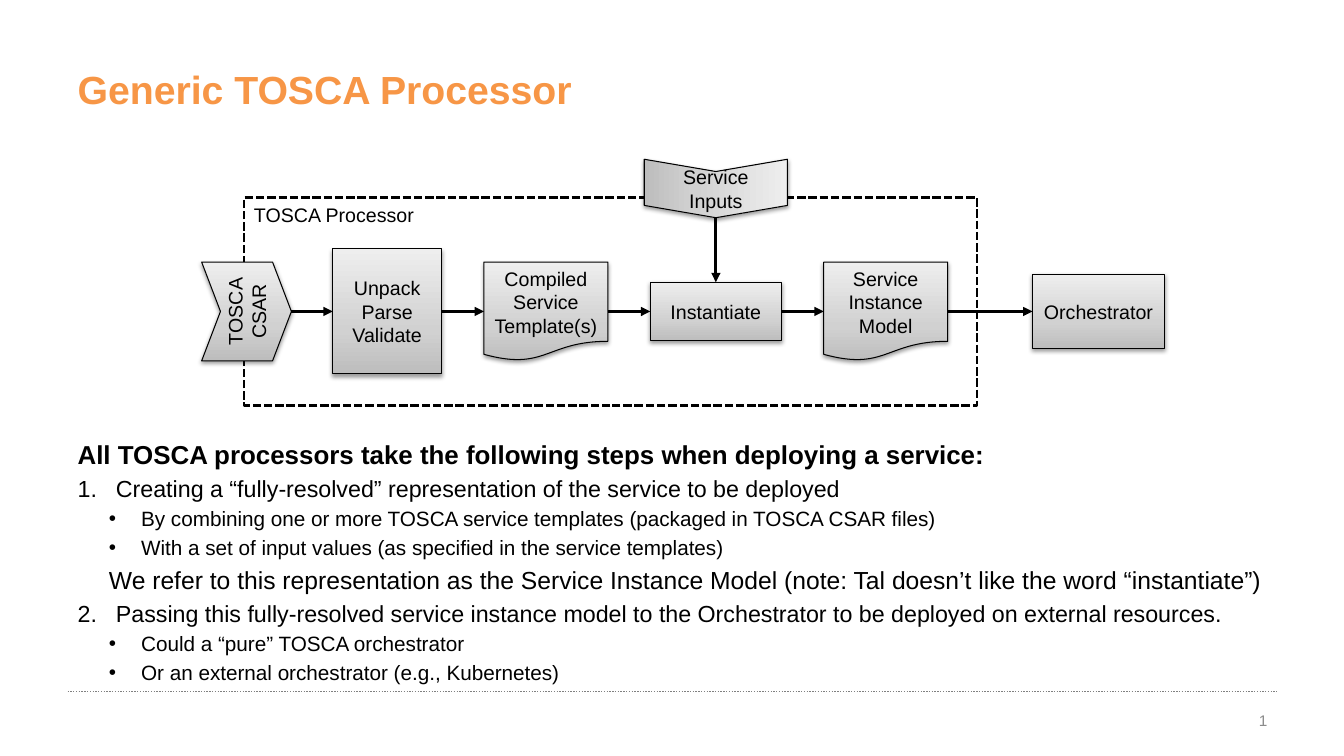
from copy import deepcopy
from dataclasses import dataclass

from lxml import etree
from pptx import Presentation
from pptx import util as u
from pptx.dml.color import RGBColor
from pptx.enum import dml, shapes, text
from pptx.oxml.ns import qn

PX = 9144  # one hundredth of an inch in EMU
FONT = "Arial"
BLACK = RGBColor(0x00, 0x00, 0x00)
ORANGE = RGBColor(0xF7, 0x96, 0x46)
RULE_GREY = RGBColor(0x80, 0x80, 0x80)
NUMBER_GREY = RGBColor(0x8C, 0x8C, 0x8C)
GRADIENT = [
    (0, RGBColor(0xBD, 0xBD, 0xBD)),
    (0.35, RGBColor(0xD1, 0xD1, 0xD1)),
    (1, RGBColor(0xEE, 0xEE, 0xEE)),
]
ROW_MIDDLE = 309
SHAPE = shapes.MSO_SHAPE
LEFT, CENTER, RIGHT = text.PP_ALIGN.LEFT, text.PP_ALIGN.CENTER, text.PP_ALIGN.RIGHT
TOP, MIDDLE = text.MSO_ANCHOR.TOP, text.MSO_ANCHOR.MIDDLE


@dataclass
class Step:
    lines: list[str]
    left: int
    width: int
    height: int
    kind: int = SHAPE.RECTANGLE
    middle: int = ROW_MIDDLE
    rotation: int = 0


@dataclass
class Item:
    words: str
    size: float
    level: int = 0
    margin: int = 0
    indent: int = 0
    bullet: str = "buNone"
    bold: bool = False


STEPS = [
    Step(["TOSCA", "CSAR"], 200, 89, 98, SHAPE.CHEVRON),
    Step(["Unpack Parse Validate"], 330, 108, 124),
    Step(["Compiled", "Service Template(s)"], 480, 123, 98, SHAPE.FLOWCHART_DOCUMENT),
    Step(["Instantiate"], 645, 130, 58),
    Step(["Service", "Instance Model"], 817, 123, 98, SHAPE.FLOWCHART_DOCUMENT),
    Step(["Orchestrator"], 1024, 131, 74),
]
INPUTS = Step(["Service Inputs"], 681, 58, 142, SHAPE.CHEVRON, middle=187, rotation=90)

NUMBERED = dict(size=16.6, level=1, margin=38, indent=-38, bullet="buAutoNum")
BULLETED = dict(size=14.8, level=2, margin=63, indent=-32, bullet="buChar")
ITEMS = [
    Item("All TOSCA processors take the following steps when deploying a service:",
         18.5, bold=True),
    Item("Creating a “fully-resolved” representation of the service to be deployed",
         **NUMBERED),
    Item("By combining one or more TOSCA service templates (packaged in TOSCA CSAR files)",
         **BULLETED),
    Item("With a set of input values (as specified in the service templates)", **BULLETED),
    Item("We refer to this representation as the Service Instance Model "
         "(note: Tal doesn’t like the word “instantiate”)", 17.6, level=2, margin=31),
    Item("Passing this fully-resolved service instance model to the Orchestrator "
         "to be deployed on external resources.", **NUMBERED),
    Item("Could a “pure” TOSCA orchestrator", **BULLETED),
    Item("Or an external orchestrator (e.g., Kubernetes)", **BULLETED),
]
BULLET_ATTRIBUTES = {
    "buNone": {},
    "buAutoNum": {"type": "arabicPeriod"},
    "buChar": {"char": "•"},
}


def box(left: int, top: int, width: int, height: int) -> list[int]:
    return [value * PX for value in (left, top, width, height)]


def place(shape, left: int, top: int, width: int, height: int) -> None:
    shape.left, shape.top, shape.width, shape.height = box(left, top, width, height)


def add_run(paragraph, words: str, *, size: float, color=BLACK, bold=False) -> None:
    run = paragraph.add_run()
    run.text = words
    run.font.name = FONT
    run.font.size = u.Pt(size)
    run.font.bold = bold
    run.font.color.rgb = color


def write(shape, lines: list[str], *, align=CENTER, anchor=MIDDLE, **font) -> None:
    frame = shape.text_frame
    frame.word_wrap = True
    frame.auto_size = text.MSO_AUTO_SIZE.NONE
    frame.vertical_anchor = anchor
    for index, line in enumerate(lines):
        paragraph = frame.add_paragraph() if index else frame.paragraphs[0]
        paragraph.alignment = align
        add_run(paragraph, line, **font)


def shade(shape) -> None:
    """Give the shape the grey gradient and the soft shadow below it."""
    shape.fill.gradient()
    shape.fill.gradient_angle = 90
    properties = shape._element.spPr
    stops = properties.find(".//" + qn("a:gsLst"))
    stops.insert(1, deepcopy(stops[0]))
    for stop, (position, color) in zip(shape.fill.gradient_stops, GRADIENT):
        stop.position = position
        stop.color.rgb = color
    shadow = etree.SubElement(
        properties.find(qn("a:effectLst")), qn("a:outerShdw"),
        blurRad="40000", dist="20000", dir="5400000", rotWithShape="0")
    color = etree.SubElement(shadow, qn("a:srgbClr"), val=str(BLACK))
    etree.SubElement(color, qn("a:alpha"), val="38000")


def add_step(slide, step: Step):
    top = step.middle - step.height // 2
    shape = slide.shapes.add_shape(step.kind, *box(step.left, top, step.width, step.height))
    shape.rotation = step.rotation
    shape.shadow.inherit = False
    shape.line.color.rgb = BLACK
    shape.line.width = u.Pt(0.75)
    shade(shape)
    write(shape, step.lines, size=14)
    if step.kind == SHAPE.CHEVRON:
        shape.adjustments[0] = 0.21
        shape.text_frame._txBody.bodyPr.set("vert", "vert270")
    return shape


def add_line(slide, start: tuple[int, int], end: tuple[int, int], *, color=BLACK, width=2.25):
    points = [value * PX for value in (*start, *end)]
    line = slide.shapes.add_connector(shapes.MSO_CONNECTOR.STRAIGHT, *points)
    line.line.color.rgb = color
    line.line.width = u.Pt(width)
    etree.SubElement(line._element.spPr, qn("a:effectLst"))
    return line


def add_arrowhead(line) -> None:
    etree.SubElement(line.line._get_or_add_ln(), qn("a:tailEnd"), type="triangle")


def add_diagram(slide) -> None:
    frame = slide.shapes.add_shape(SHAPE.RECTANGLE, *box(242, 196, 727, 206))
    frame.shadow.inherit = False
    frame.fill.background()
    frame.line.color.rgb = BLACK
    frame.line.width = u.Pt(2)
    frame.line.dash_style = dml.MSO_LINE.SQUARE_DOT
    write(frame, ["TOSCA Processor"], size=14, align=LEFT, anchor=TOP)

    steps = [add_step(slide, step) for step in STEPS]
    add_step(slide, INPUTS)
    for source, target in zip(steps, steps[1:]):
        arrow = add_line(slide, (0, 0), (0, 0))
        arrow.begin_connect(source, 3)
        arrow.end_connect(target, 1)
        add_arrowhead(arrow)
    tip = (INPUTS.left + INPUTS.width // 2, INPUTS.middle + INPUTS.width // 2)
    arrow = add_line(slide, tip, tip)
    arrow.end_connect(steps[3], 0)
    add_arrowhead(arrow)


def fill_body(body) -> None:
    frame = body.text_frame
    frame.auto_size = text.MSO_AUTO_SIZE.NONE
    for index, item in enumerate(ITEMS):
        paragraph = frame.add_paragraph() if index else frame.paragraphs[0]
        paragraph.level = item.level
        if not index:
            paragraph.space_before = u.Pt(0)
        properties = paragraph._p.get_or_add_pPr()
        properties.set("marL", str(item.margin * PX))
        properties.set("indent", str(item.indent * PX))
        etree.SubElement(properties, qn("a:" + item.bullet), BULLET_ATTRIBUTES[item.bullet])
        add_run(paragraph, item.words, size=item.size, bold=item.bold)


def main() -> None:
    presentation = Presentation()
    presentation.slide_width, presentation.slide_height = 1333 * PX, 750 * PX
    slide = presentation.slides.add_slide(presentation.slide_layouts[1])
    rule = add_line(slide, (67, 686), (1266, 686), color=RULE_GREY, width=1)
    rule.line.dash_style = dml.MSO_LINE.ROUND_DOT
    title, body = slide.placeholders
    place(title, 67, 45, 1200, 87)
    write(title, ["Generic TOSCA Processor"], size=28, color=ORANGE, bold=True, align=LEFT)
    place(body, 67, 430, 1200, 265)
    fill_body(body)
    number = slide.shapes.add_textbox(*box(956, 695, 311, 40))
    write(number, ["1"], size=11, color=NUMBER_GREY, align=RIGHT)
    add_diagram(slide)
    presentation.save("out.pptx")


if __name__ == "__main__":
    main()
